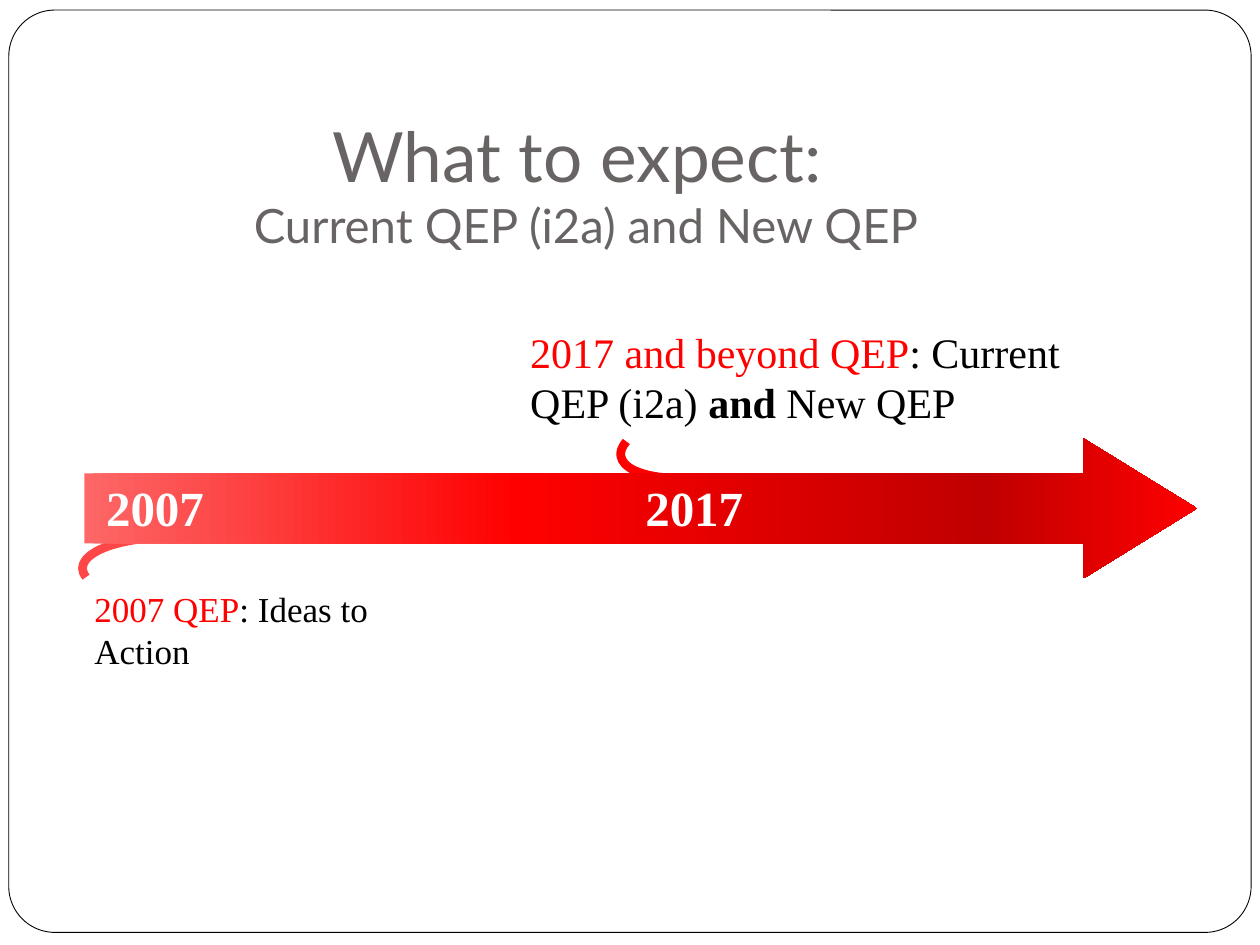
from lxml import etree
from pptx import Presentation
from pptx.dml.color import RGBColor
from pptx.enum import shapes, text
from pptx.oxml import ns
from pptx.util import Inches, Pt

COLORS = {"white": "FFFFFF", "black": "000000", "gray": "696464",
          "red": "FF0000", "coral": "FF4747"}
SERIF = "Times New Roman"
TITLE = [("What to expect: \v", 39.6, "gray", False),
         ("Current QEP (i2a) and New QEP", 27, "gray", False)]
TITLE_BOX = (0.19, 0.86, 8.92, 1.25)
FRAME_BOX = (0.07, 0.08, 9.86, 7.32)
TIMELINE_BOX = (0.67, 3.48, 8.83, 1.11)
TIMELINE_STOPS = [(0, "FD6767"), (39, "FF0000"), (81, "C00000"), (100, "FF0000")]
HOOKS = [
    {"box": (1.09, 3.83, 0.49, 1.36), "rotation": 270, "color": "coral",
     "angles": (158.314, 203.662), "flip": False},
    {"box": (5.36, 2.81, 0.53, 1.41), "rotation": 81.5, "color": "red",
     "angles": (156.345, 203.662), "flip": True},
]
CENTERED = {"anchor": text.MSO_ANCHOR.MIDDLE, "align": text.PP_ALIGN.CENTER}
LEFT = {"anchor": text.MSO_ANCHOR.TOP, "align": text.PP_ALIGN.LEFT}
LABELS = [
    ((0.72, 3.74, 1.02, 0.57), CENTERED, [("2007", 28, "white", True)]),
    ((4.94, 3.74, 1.14, 0.57), CENTERED, [("2017", 28, "white", True)]),
    ((0.65, 4.61, 2.98, 0.44), LEFT,
     [("2007 QEP", 20, "red", False), (": Ideas to Action", 20, "black", False)]),
    ((4.11, 2.54, 5, 0.91), LEFT,
     [("2017 and beyond QEP", 24, "red", False),
      (": Current QEP (i2a) ", 24, "black", False),
      ("and", 24, "black", True), (" New QEP", 24, "black", False)]),
]


def rgb(name):
    return RGBColor.from_string(COLORS[name])


def inches(box):
    return [Inches(value) for value in box]


def write(frame, runs, font_name, anchor, align):
    settings = {"word_wrap": True, "vertical_anchor": anchor}
    for key, value in settings.items():
        setattr(frame, key, value)
    paragraph = frame.paragraphs[0]
    paragraph.alignment = align
    for words, size, color, bold in runs:
        run = paragraph.add_run()
        run.text = words.rstrip("\v")
        for key, value in {"name": font_name, "size": Pt(size), "bold": bold}.items():
            setattr(run.font, key, value)
        run.font.color.rgb = rgb(color)
        if words.endswith("\v"):
            paragraph.add_line_break()


def add_outline(slide, kind, box, color, width):
    outline = slide.shapes.add_shape(kind, *inches(box))
    outline.shadow.inherit = False
    outline.fill.background()
    outline.line.color.rgb = rgb(color)
    outline.line.width = Pt(width)
    return outline


def add_title(slide):
    title = slide.shapes.title
    for key, value in zip(("left", "top", "width", "height"), inches(TITLE_BOX)):
        setattr(title, key, value)
    frame = title.text_frame
    frame.auto_size = text.MSO_AUTO_SIZE.NONE
    frame.margin_bottom = Inches(0.1)
    write(frame, TITLE, "Lato", text.MSO_ANCHOR.BOTTOM, text.PP_ALIGN.CENTER)


def add_hook(slide, hook):
    arc = add_outline(slide, shapes.MSO_SHAPE.ARC, hook["box"], hook["color"], 5)
    arc.rotation = hook["rotation"]
    for index, angle in enumerate(hook["angles"]):
        arc.adjustments[index] = angle
    if hook["flip"]:
        arc.element.spPr.find(ns.qn("a:xfrm")).set("flipV", "1")


def add_timeline(slide):
    arrow = slide.shapes.add_shape(shapes.MSO_SHAPE.RIGHT_ARROW, *inches(TIMELINE_BOX))
    arrow.shadow.inherit = False
    arrow.adjustments[0] = 0.5
    arrow.adjustments[1] = 0.81
    arrow.line.fill.background()
    arrow.fill.gradient()
    arrow.fill.gradient_angle = 0
    stops = arrow.element.spPr.find(ns.qn("a:gradFill")).find(ns.qn("a:gsLst"))
    for stop in list(stops):
        stops.remove(stop)
    for percent, color in TIMELINE_STOPS:
        stop = etree.SubElement(stops, ns.qn("a:gs"), pos=str(percent * 1000))
        etree.SubElement(stop, ns.qn("a:srgbClr"), val=color)


def main():
    deck = Presentation()
    deck.slide_width, deck.slide_height = Inches(10), Inches(7.5)
    slide = deck.slides.add_slide(deck.slide_layouts[5])
    frame = add_outline(slide, shapes.MSO_SHAPE.ROUNDED_RECTANGLE, FRAME_BOX, "black", 0.5)
    frame.adjustments[0] = 0.05
    add_title(slide)
    for hook in HOOKS:
        add_hook(slide, hook)
    add_timeline(slide)
    for box, layout, runs in LABELS:
        label = slide.shapes.add_textbox(*inches(box))
        label.text_frame.auto_size = text.MSO_AUTO_SIZE.SHAPE_TO_FIT_TEXT
        write(label.text_frame, runs, SERIF, **layout)
    deck.save("out.pptx")


if __name__ == "__main__":
    main()
